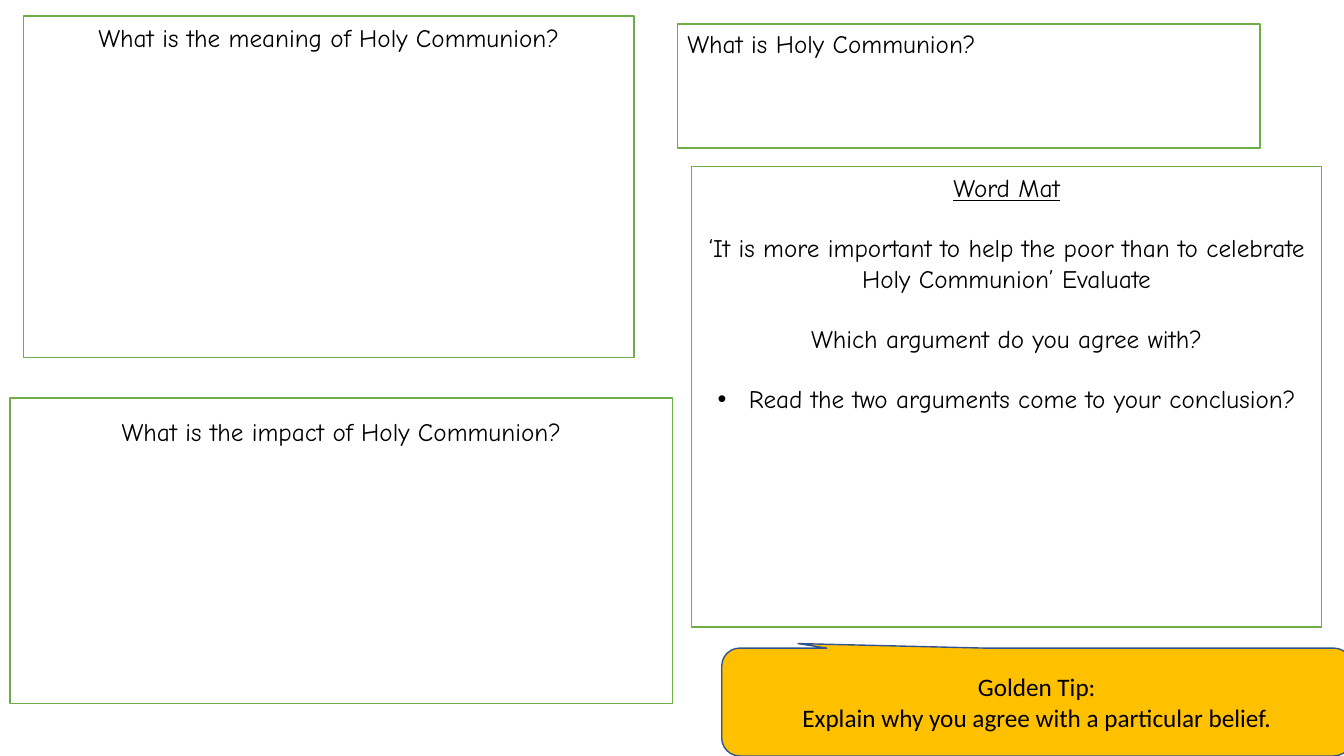
from dataclasses import dataclass, field

from lxml import etree
from pptx import Presentation
from pptx.dml.color import RGBColor
from pptx.enum.shapes import MSO_SHAPE
from pptx.enum.text import MSO_ANCHOR, PP_ALIGN
from pptx.oxml.ns import qn
from pptx.slide import Slide
from pptx.text.text import TextFrame
from pptx.util import Emu, Inches, Pt

RECTANGLE = MSO_SHAPE.RECTANGLE
CALLOUT = MSO_SHAPE.ROUNDED_RECTANGULAR_CALLOUT
LEFT, CENTER = PP_ALIGN.LEFT, PP_ALIGN.CENTER
TOP, MIDDLE = MSO_ANCHOR.TOP, MSO_ANCHOR.MIDDLE

SLIDE_WIDTH, SLIDE_HEIGHT = Inches(13.33), Inches(7.5)


@dataclass(frozen=True)
class Theme:
    paper: str = "FFFFFF"
    ink: str = "000000"
    border: str = "70AD47"
    tip_fill: str = "FFC000"
    tip_border: str = "31538F"
    handwriting: str = "Comic Neue"
    plain: str = "Calibri"
    text_size: Pt = Pt(18)
    border_width: Pt = Pt(1)
    question_gap: Pt = Pt(21.5)


THEME = Theme()


@dataclass(frozen=True)
class Line:
    text: str
    underline: bool = False
    bullet: bool = False


@dataclass(frozen=True)
class Panel:
    left: float
    top: float
    width: float
    height: float
    lines: list[Line]
    outline: MSO_SHAPE = RECTANGLE
    fill: str = THEME.paper
    border: str = THEME.border
    font: str = THEME.handwriting
    align: PP_ALIGN = CENTER
    anchor: MSO_ANCHOR = TOP
    inset: float = 0.06
    gap: Pt = THEME.question_gap
    adjustments: list[float] = field(default_factory=list)


PANELS = [
    Panel(1.73, 2.13, 45.45, 45.2, [Line("What is the meaning of Holy Communion?")]),
    Panel(51.45, 22, 46.88, 60.93, [
        Line("Word Mat", underline=True),
        Line("‘It is more important to help the poor than to celebrate Holy Communion’ Evaluate"),
        Line("Which argument do you agree with?"),
        Line("Read the two arguments come to your conclusion?", bullet=True),
    ]),
    Panel(0.75, 52.67, 49.28, 40.4, [Line("What is the impact of Holy Communion?")], inset=0.18),
    Panel(50.4, 3.2, 43.35, 16.4, [Line("What is Holy Communion?")], align=LEFT, inset=0.04),
    Panel(53.7, 85.73, 46.88, 14.27, [
        Line("Golden Tip:"),
        Line("Explain why you agree with a particular belief."),
    ], outline=CALLOUT, fill=THEME.tip_fill, border=THEME.tip_border, font=THEME.plain,
        anchor=MIDDLE, inset=0.05, gap=Pt(0), adjustments=[-0.379, -0.542, 0.167]),
]


def share(percent: float, whole: int) -> Emu:
    return Emu(round(whole * percent / 100))


def write_lines(frame: TextFrame, panel: Panel) -> None:
    frame_format = {
        "word_wrap": True,
        "vertical_anchor": panel.anchor,
        "margin_left": Inches(0.1),
        "margin_right": Inches(0.1),
        "margin_top": Inches(panel.inset),
        "margin_bottom": Inches(0.05),
    }
    for name, value in frame_format.items():
        setattr(frame, name, value)
    for index, line in enumerate(panel.lines):
        paragraph = frame.add_paragraph() if index else frame.paragraphs[0]
        paragraph.alignment = panel.align
        if index:
            paragraph.space_before = panel.gap
        if line.bullet:
            properties = paragraph._p.get_or_add_pPr()
            indent = Inches(0.31)
            properties.set("marL", str(indent))
            properties.set("indent", str(-indent))
            etree.SubElement(properties, qn("a:buFont")).set("typeface", "Arial")
            etree.SubElement(properties, qn("a:buChar")).set("char", "•")
        run = paragraph.add_run()
        run.text = line.text
        font_format = {"name": panel.font, "size": THEME.text_size, "underline": line.underline}
        for name, value in font_format.items():
            setattr(run.font, name, value)
        run.font.color.rgb = RGBColor.from_string(THEME.ink)


def draw_panel(slide: Slide, panel: Panel) -> None:
    box = slide.shapes.add_shape(
        panel.outline,
        share(panel.left, SLIDE_WIDTH),
        share(panel.top, SLIDE_HEIGHT),
        share(panel.width, SLIDE_WIDTH),
        share(panel.height, SLIDE_HEIGHT),
    )
    for index, value in enumerate(panel.adjustments):
        box.adjustments[index] = value
    box.shadow.inherit = False
    box.fill.solid()
    box.fill.fore_color.rgb = RGBColor.from_string(panel.fill)
    box.line.color.rgb = RGBColor.from_string(panel.border)
    box.line.width = THEME.border_width
    write_lines(box.text_frame, panel)


def main() -> None:
    deck = Presentation()
    deck.slide_width, deck.slide_height = SLIDE_WIDTH, SLIDE_HEIGHT
    slide = deck.slides.add_slide(deck.slide_layouts[6])
    for panel in PANELS:
        draw_panel(slide, panel)
    deck.save("out.pptx")


if __name__ == "__main__":
    main()
